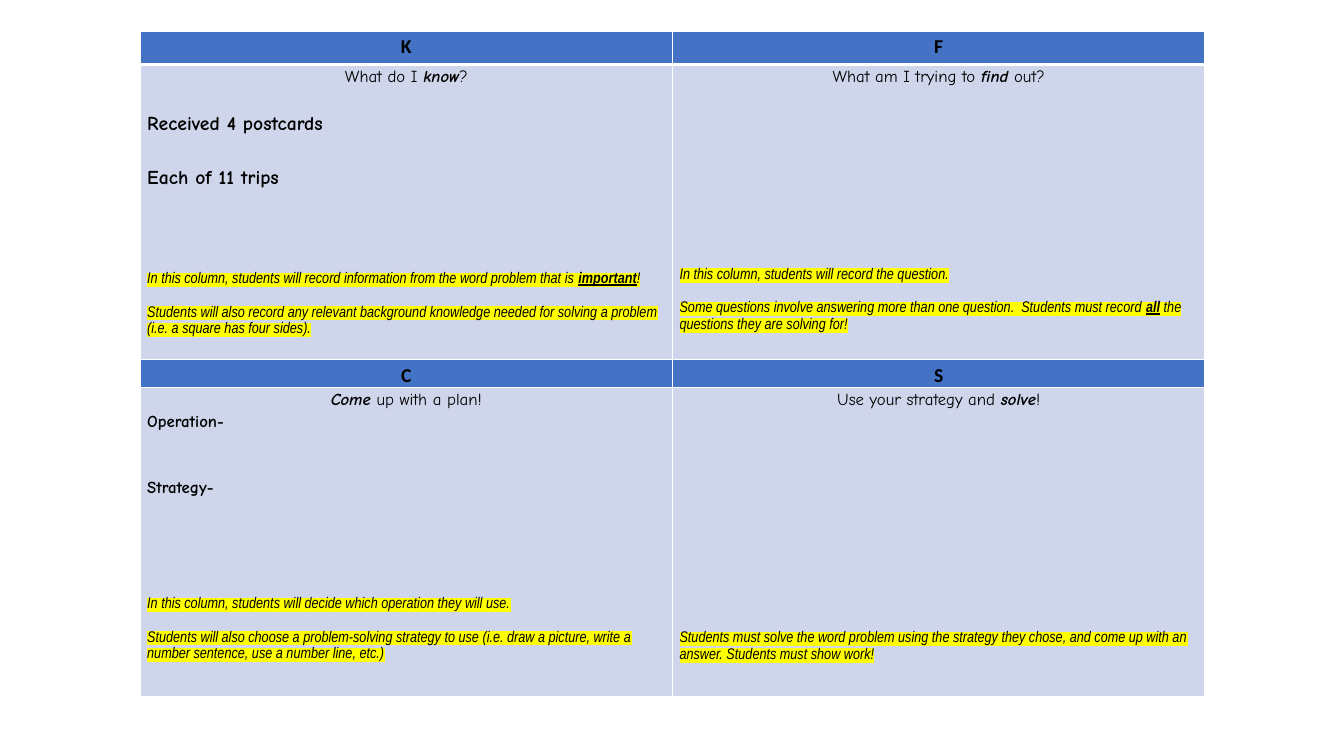
from lxml import etree
from pptx import Presentation
from pptx.dml.color import RGBColor
from pptx.enum.text import MSO_ANCHOR, PP_ALIGN
from pptx.oxml.ns import qn
from pptx.util import Inches, Pt

BLACK = RGBColor(0x00, 0x00, 0x00)
WHITE = RGBColor(0xFF, 0xFF, 0xFF)
BLUE = RGBColor(0x44, 0x72, 0xC4)
PALE_BLUE = RGBColor(0xCF, 0xD5, 0xEA)
YELLOW = RGBColor(0xFF, 0xFF, 0x00)
LEFT, CENTER = PP_ALIGN.LEFT, PP_ALIGN.CENTER
TOP = MSO_ANCHOR.TOP

# Text styles
LETTER = dict(font="Calibri", size=14, bold=True, align=CENTER)
PROMPT = dict(font="Comic Neue", size=12, align=CENTER)
FACT = dict(font="Comic Neue", size=14, bold=True, line_spacing=1.0)
LABEL = dict(font="Comic Neue", size=12, bold=True)
NOTE = dict(font="Arial Narrow", size=11, italic=True, highlight=YELLOW)

# Cell contents: style, space before in points, text (emphasis between asterisks)
KNOW = [
    (PROMPT, 0, "What do I *know*?"),
    (FACT, 19, "Received 4 postcards"),
    (FACT, 22, "Each of 11 trips"),
    (NOTE, 58, "In this column, students will record information from the "
               "word problem that is *important*!"),
    (NOTE, 12, "Students will also record any relevant background knowledge "
               "needed for solving a problem (i.e. a square has four sides)."),
]
FIND = [
    (PROMPT, 0, "What am I trying to *find* out?"),
    (NOTE, 128, "In this column, students will record the question."),
    (NOTE, 12, "Some questions involve answering more than one question.  "
               "Students must record *all* the questions they are solving for!"),
]
COME_UP = [
    (PROMPT, 0, "*Come* up with a plan!"),
    (LABEL, 0, "Operation-"),
    (LABEL, 31, "Strategy-"),
    (NOTE, 70, "In this column, students will decide which operation they will use."),
    (NOTE, 12, "Students will also choose a problem-solving strategy to use "
               "(i.e. draw a picture, write a number sentence, use a number line, etc.)"),
]
SOLVE = [
    (PROMPT, 0, "Use your strategy and *solve*!"),
    (NOTE, 157, "Students must solve the word problem using the strategy they "
                "chose, and come up with an answer. Students must show work!"),
]
ROWS = [
    (0.33, BLUE, [[(LETTER, 0, "K")], [(LETTER, 0, "F")]]),
    (2.93, PALE_BLUE, [KNOW, FIND]),
    (0.27, BLUE, [[(LETTER, 0, "C")], [(LETTER, 0, "S")]]),
    (3.07, PALE_BLUE, [COME_UP, SOLVE]),
]


def write_text(paragraph, text, font, size, bold=False, italic=False,
               highlight=None, align=LEFT, line_spacing=1.15, space_before=0):
    paragraph.alignment = align
    paragraph.line_spacing = line_spacing
    paragraph.space_before = Pt(space_before)
    for index, part in enumerate(text.split("*")):
        if not part:
            continue
        emphasis = index % 2 == 1
        run = paragraph.add_run()
        run.text = part
        run.font.size = Pt(size)
        run.font.bold = bold or emphasis
        run.font.italic = italic or emphasis
        run.font.underline = emphasis and highlight is not None
        run.font.color.rgb = BLACK
        if highlight is not None:
            mark = etree.SubElement(run.font._element, qn("a:highlight"))
            etree.SubElement(mark, qn("a:srgbClr"), val=str(highlight))
        run.font.name = font


def set_border(cell, side, points):
    line = etree.SubElement(cell._tc.get_or_add_tcPr(), qn(f"a:ln{side}"),
                            w=str(Pt(points)))
    fill = etree.SubElement(line, qn("a:solidFill"))
    etree.SubElement(fill, qn("a:srgbClr"), val=str(WHITE))


presentation = Presentation()
presentation.slide_width = Inches(13.33)
presentation.slide_height = Inches(7.5)
slide = presentation.slides.add_slide(presentation.slide_layouts[6])

# K-F-C-S table
table = slide.shapes.add_table(len(ROWS), 2, Inches(1.39), Inches(0.31),
                               Inches(10.56), Inches(6.6)).table
for column in table.columns:
    column.width = Inches(5.28)

for row_index, (height, fill_color, contents) in enumerate(ROWS):
    table.rows[row_index].height = Inches(height)
    for column_index, content in enumerate(contents):
        cell = table.cell(row_index, column_index)
        cell.margin_left = cell.margin_right = Inches(0.07)
        cell.margin_top = cell.margin_bottom = 0
        cell.vertical_anchor = TOP

        # White borders, thicker under the first row
        for side in ("L", "R"):
            set_border(cell, side, 1)
        set_border(cell, "T", 3 if row_index == 1 else 1)
        set_border(cell, "B", 3 if row_index == 0 else 1)
        cell.fill.solid()
        cell.fill.fore_color.rgb = fill_color

        for index, (style, space_before, text) in enumerate(content):
            frame = cell.text_frame
            paragraph = frame.add_paragraph() if index else frame.paragraphs[0]
            write_text(paragraph, text, space_before=space_before, **style)

presentation.save("out.pptx")
